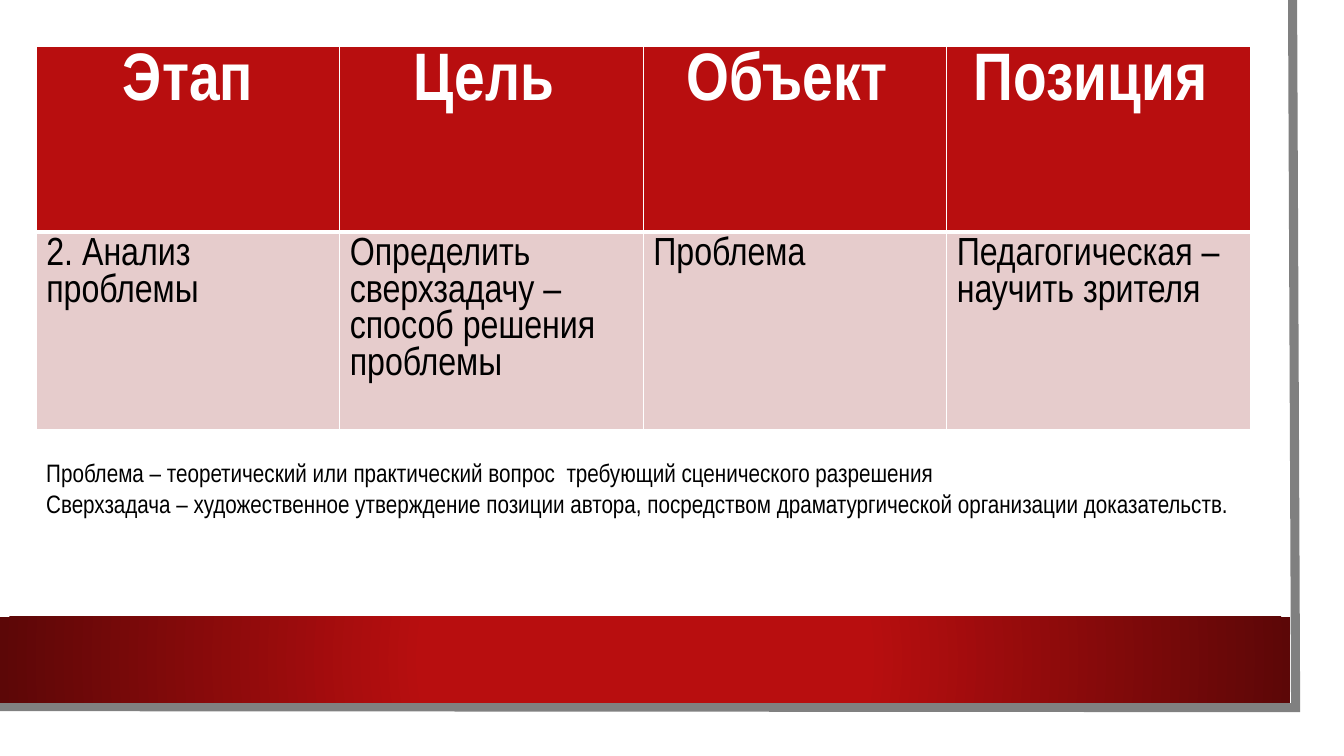
"""Builds a slide with a stage table and two definitions above a red band."""
from dataclasses import dataclass

from lxml.etree import SubElement
from pptx import Presentation
from pptx.dml.color import RGBColor
from pptx.enum.shapes import MSO_SHAPE
from pptx.enum.text import PP_ALIGN
from pptx.oxml.ns import qn
from pptx.util import Inches, Pt

HEADINGS = ["Этап", "Цель ", "Объект ", "Позиция "]
STAGE = [
    "2. Анализ проблемы",
    "Определить сверхзадачу – способ решения проблемы",
    "Проблема",
    "Педагогическая – научить зрителя",
]
DEFINITIONS = [
    "Проблема – теоретический или практический вопрос  требующий сценического разрешения",
    "Сверхзадача – художественное утверждение позиции автора, "
    "посредством драматургической организации доказательств.",
]
ROW_HEIGHTS = [1.84, 1.96]
LEFT, TABLE_TOP, COLUMN_WIDTH = 0.36, 0.46, 3.01
DEFINITIONS_TOP, DEFINITIONS_HEIGHT = 4.49, 1.01
FRAME_UNITS_PER_INCH = 100
FRAME_POINTS = [(1282, 0), (1285, 702), (-3, 701)]


@dataclass(frozen=True)
class Theme:
    font: str = "Arial Narrow"
    red: str = "B80E0F"
    dark_red: str = "5C0707"
    pink: str = "E6CCCC"
    gray: str = "808080"
    white: str = "FFFFFF"
    black: str = "000000"
    heading_size: int = 48
    cell_size: int = 28
    definition_size: int = 18
    frame_width: float = 6.5
    heading_rule_width: int = 3
    cell_rule_width: int = 1


THEME = Theme()


def color(value):
    return RGBColor.from_string(value)


def style_paragraph(paragraph, size, text_color, bold=False):
    paragraph.font.name = THEME.font
    paragraph.font.size = Pt(size)
    paragraph.font.bold = bold
    paragraph.font.color.rgb = color(text_color)


def add_rectangle(slide, left, top, width, height):
    shape = slide.shapes.add_shape(
        MSO_SHAPE.RECTANGLE, Inches(left), Inches(top), Inches(width), Inches(height))
    shape.shadow.inherit = False
    shape.line.fill.background()
    shape.fill.solid()
    shape.fill.fore_color.rgb = color(THEME.white)
    return shape


def fill_radially(shape, stops):
    shape.fill.gradient()
    gradient = shape.fill._xPr.find(qn("a:gradFill"))
    for child in list(gradient):
        gradient.remove(child)
    stop_list = SubElement(gradient, qn("a:gsLst"))
    for percent, value in stops:
        stop = SubElement(stop_list, qn("a:gs"), pos=str(percent * 1000))
        SubElement(stop, qn("a:srgbClr"), val=value)
    circle = SubElement(gradient, qn("a:path"), path="circle")
    SubElement(circle, qn("a:fillToRect"), {side: "50000" for side in "ltrb"})


def add_background(slide):
    add_rectangle(slide, 0, 0, 13.1, 7.27)
    start, *corners = FRAME_POINTS
    builder = slide.shapes.build_freeform(*start, scale=Inches(1) / FRAME_UNITS_PER_INCH)
    builder.add_line_segments(corners, close=False)
    frame = builder.convert_to_shape()
    frame.shadow.inherit = False
    frame.fill.background()
    frame.line.color.rgb = color(THEME.gray)
    frame.line.width = Pt(THEME.frame_width)
    SubElement(frame.line._get_or_add_ln(), qn("a:miter"), lim="800000")
    band = add_rectangle(slide, 0, 6.12, 12.8, 0.85)
    fill_radially(band, [(34, THEME.red), (100, THEME.dark_red)])


def add_borders(cell, bottom_width):
    properties = cell._tc.get_or_add_tcPr()
    widths = dict.fromkeys("LRT", THEME.cell_rule_width) | {"B": bottom_width}
    for side, width in widths.items():
        border = SubElement(properties, qn(f"a:ln{side}"), w=str(Pt(width)))
        fill = SubElement(border, qn("a:solidFill"))
        SubElement(fill, qn("a:srgbClr"), val=THEME.white)


def add_stage_table(slide):
    rows = [HEADINGS, STAGE]
    table = slide.shapes.add_table(
        len(rows), len(HEADINGS), Inches(LEFT), Inches(TABLE_TOP),
        Inches(COLUMN_WIDTH * len(HEADINGS)), Inches(sum(ROW_HEIGHTS))).table
    for column in table.columns:
        column.width = Inches(COLUMN_WIDTH)
    for row_index, texts in enumerate(rows):
        heading = row_index == 0
        table.rows[row_index].height = Inches(ROW_HEIGHTS[row_index])
        for column_index, text in enumerate(texts):
            cell = table.cell(row_index, column_index)
            cell.text = text
            add_borders(cell, THEME.heading_rule_width if heading else THEME.cell_rule_width)
            cell.fill.solid()
            cell.fill.fore_color.rgb = color(THEME.red if heading else THEME.pink)
            paragraph = cell.text_frame.paragraphs[0]
            paragraph.alignment = PP_ALIGN.CENTER if heading else PP_ALIGN.LEFT
            if heading:
                style_paragraph(paragraph, THEME.heading_size, THEME.white, bold=True)
            else:
                style_paragraph(paragraph, THEME.cell_size, THEME.black)


def add_definitions(slide):
    text_frame = slide.shapes.add_textbox(
        Inches(LEFT), Inches(DEFINITIONS_TOP), Inches(COLUMN_WIDTH * len(HEADINGS)),
        Inches(DEFINITIONS_HEIGHT)).text_frame
    text_frame.word_wrap = True
    text_frame.text = "\n".join(DEFINITIONS)
    for paragraph in text_frame.paragraphs:
        style_paragraph(paragraph, THEME.definition_size, THEME.black)


def main():
    presentation = Presentation()
    presentation.slide_width = Inches(13.33)
    presentation.slide_height = Inches(7.5)
    slide = presentation.slides.add_slide(presentation.slide_layouts[6])
    add_background(slide)
    add_stage_table(slide)
    add_definitions(slide)
    presentation.save("out.pptx")


if __name__ == "__main__":
    main()
